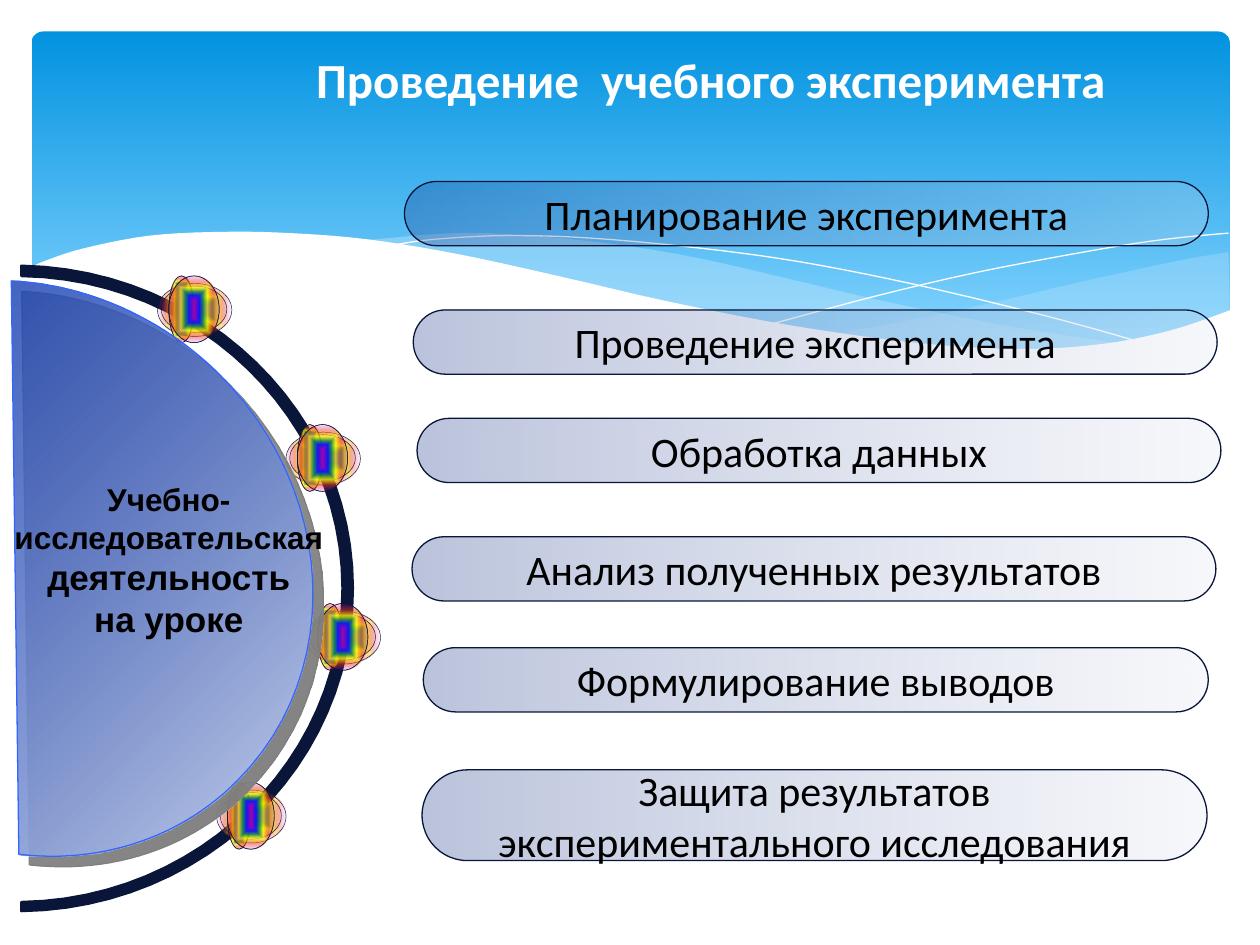
from dataclasses import dataclass

from lxml import etree
from pptx import Presentation
from pptx import util as u
from pptx.dml.color import RGBColor
from pptx.enum import shapes, text
from pptx.oxml.ns import qn


@dataclass(frozen=True)
class Theme:
    """Colours as hex with percent stops, and type sizes in points."""
    ink: str = "000000"
    white: str = "FFFFFF"
    navy: str = "091639"
    edge: str = "3366FF"
    shadow: str = "808080"
    ribbon: str = "C6E7FC"
    sky: tuple = ((0, "0293E0", 100), (90, "83D3FE", 100))
    pill: tuple = ((0, "133187", 29), (100, "D9DEEC", 21))
    disc: tuple = ((0, "C6D0EC", 100), (100, "1A42B2", 81))
    bead: tuple = ((0, "A603AB", 100), (21, "0819FB", 80), (35, "1A8D48", 66),
                   (52, "FFFF00", 50), (73, "EE3F17", 29), (88, "E81766", 15),
                   (100, "A603AB", 3))
    body_font: str = "Calibri"
    label_font: str = "Arial"
    title_size: int = 28
    pill_size: int = 24
    label_size: int = 18
    label_large: int = 20


@dataclass(frozen=True)
class Box:
    """A rectangle in inches."""
    left: float
    top: float
    width: float
    height: float

    def inside(self, left, top, width, height):
        """Return a box placed relative to this one."""
        return Box(self.left + left, self.top + top, width, height)

    def lengths(self):
        """Return the four lengths for a shape call."""
        return [u.Inches(v) for v in (self.left, self.top, self.width, self.height)]


THEME = Theme()


def add_color(parent, color, opacity):
    """Append a colour with its opacity in percent."""
    node = etree.SubElement(parent, qn("a:srgbClr"), val=color)
    if opacity < 100:
        etree.SubElement(node, qn("a:alpha"), val=str(opacity * 1000))


def fill_gradient(shape, stops, angle=None):
    """Fill linearly at an angle, or from the centre if there is none."""
    shape.fill.gradient()
    grad = shape.element.spPr.find(qn("a:gradFill"))
    for child in list(grad):
        grad.remove(child)
    stop_list = etree.SubElement(grad, qn("a:gsLst"))
    for place, color, opacity in stops:
        stop = etree.SubElement(stop_list, qn("a:gs"), pos=str(place * 1000))
        add_color(stop, color, opacity)
    if angle is None:
        centre = etree.SubElement(grad, qn("a:path"), path="shape")
        etree.SubElement(centre, qn("a:fillToRect"),
                         {side: "50000" for side in "ltrb"})
    else:
        etree.SubElement(grad, qn("a:lin"), ang=str(round(angle * 60000)), scaled="0")


def fill_solid(shape, color, opacity=100):
    """Fill with one colour at an opacity in percent."""
    shape.fill.solid()
    shape.fill.fore_color.rgb = RGBColor.from_string(color)
    if opacity < 100:
        solid = shape.element.spPr.find(qn("a:solidFill"))
        solid.clear()
        add_color(solid, color, opacity)


def set_outline(shape, color=None, width=0):
    """Drop the inherited shadow and set or remove the outline."""
    shape.shadow.inherit = False
    if color is None:
        shape.line.fill.background()
    else:
        shape.line.color.rgb = RGBColor.from_string(color)
        shape.line.width = u.Pt(width)


def write(frame, lines, *, sizes, font, color, bold=False, wrap=False,
          anchor=text.MSO_ANCHOR.MIDDLE):
    """Write centred lines, one paragraph each."""
    frame.word_wrap = wrap
    frame.vertical_anchor = anchor
    for index, (line, size) in enumerate(zip(lines, sizes)):
        para = frame.paragraphs[0] if index == 0 else frame.add_paragraph()
        para.alignment = text.PP_ALIGN.CENTER
        span = para.add_run()
        span.text = line
        span.font.size, span.font.name, span.font.bold = u.Pt(size), font, bold
        span.font.color.rgb = RGBColor.from_string(color)


def bezier(a, b, c, d, steps=24):
    """Sample a cubic curve."""
    return [tuple((1 - t) ** 3 * p + 3 * t * (1 - t) ** 2 * q
                  + 3 * t * t * (1 - t) * r + t ** 3 * s
                  for p, q, r, s in zip(a, b, c, d))
            for t in (i / steps for i in range(steps + 1))]


def smooth(points):
    """Sample a smooth curve that passes through all points."""
    ends = [points[0], *points, points[-1]]
    curve = []
    for before, start, end, after in zip(ends, ends[1:], ends[2:], ends[3:]):
        lead = tuple(s + (e - b) / 6 for b, s, e in zip(before, start, end))
        trail = tuple(e - (a - s) / 6 for s, e, a in zip(start, end, after))
        curve += bezier(start, lead, trail, end, 5)
    return curve


def add_outline(parent, box, points, close=True):
    """Build a freeform from points relative to a box."""
    spots = [(u.Inches(box.left + x), u.Inches(box.top + y)) for x, y in points]
    builder = parent.build_freeform(*spots[0], scale=1.0)
    builder.add_line_segments(spots[1:], close=close)
    return builder.convert_to_shape()


def add_header(page, box):
    """Draw the sky panel with its waves."""
    panel = page.shapes.add_shape(shapes.MSO_SHAPE.ROUNDED_RECTANGLE, *box.lengths())
    panel.adjustments[0] = 0.034
    fill_gradient(panel, THEME.sky, 90)
    set_outline(panel)
    waves = page.shapes.add_group_shape().shapes
    right_top = [(9.5, 1.75), (9.1, 1.82), (8.36, 1.98), (7.28, 2.23), (6.36, 2.4)]
    right_base = [(6.36, 2.4), (6.94, 2.47), (7.56, 2.52), (8.1, 2.52),
                  (8.64, 2.47), (9.1, 2.37), (9.51, 2.22)]
    long_top = [(8.68, 2.48), (7.82, 2.35), (6.81, 2.15), (6.04, 1.97), (5.3, 1.8),
                (4.64, 1.69), (3.95, 1.62), (3.36, 1.6), (2.61, 1.66)]
    long_base = [(2.61, 1.66), (3.37, 1.78), (4.24, 1.97), (5.05, 2.15), (5.93, 2.33),
                 (6.7, 2.45), (7.36, 2.52), (8.03, 2.53), (8.68, 2.48)]
    falling = [(2.84, 1.7), (3.19, 1.65), (3.76, 1.62), (4.44, 1.64), (5.31, 1.72),
               (6.11, 1.83), (7.02, 2.01), (8.06, 2.26), (8.82, 2.47)]
    rising = [(5.88, 2.32), (6.7, 2.1), (7.51, 1.91), (8.41, 1.74), (8.99, 1.65),
              (9.5, 1.6)]
    shore = [(9.52, 2.21), (9.05, 2.37), (8.5, 2.48), (7.84, 2.52), (7.01, 2.47),
             (6.01, 2.33), (5.04, 2.14), (4.22, 1.95), (3.4, 1.77), (2.67, 1.65),
             (2.05, 1.6), (1.52, 1.59), (0.94, 1.62), (0.42, 1.72), (0.11, 1.82),
             (-0.02, 1.88)]
    for top, base, opacity in ((right_top, right_base, 29), (long_top, long_base, 40)):
        ribbon = add_outline(waves, box, smooth(top) + smooth(base))
        fill_solid(ribbon, THEME.ribbon, opacity)
        set_outline(ribbon)
    for points in (falling, rising):
        strand = add_outline(waves, box, smooth(points), close=False)
        strand.fill.background()
        set_outline(strand, THEME.white)
    ground = add_outline(waves, box, smooth(shore) + [(-0.02, 3.04), (9.52, 3.04)])
    fill_solid(ground, THEME.white)
    set_outline(ground)


def add_bead(parent, box):
    """Draw one bead of overlapping ellipses."""
    scale = box.width / 0.59
    tall = [(0.09, 0, width, 0.53) for width in (0.2, 0.2, 0.4, 0.4)]
    for left, top, width, height in [(0, 0.06, 0.59, 0.42), (0.03, 0.08, 0.52, 0.37), *tall]:
        part = box.inside(left * scale, top, width * scale, height)
        oval = parent.add_shape(shapes.MSO_SHAPE.OVAL, *part.lengths())
        fill_gradient(oval, THEME.bead)
        set_outline(oval, THEME.navy, 0.25)


def add_orbit(page, box):
    """Draw the arc with its four beads."""
    orbit = page.shapes.add_group_shape().shapes
    inner = (bezier((0, 0.08), (1.41, 0.1), (2.55, 1.21), (2.55, 2.56))
             + bezier((2.55, 2.56), (2.55, 3.92), (1.41, 5.03), (0, 5.05)))
    outer = (bezier((0, 5.12), (1.46, 5.1), (2.63, 3.96), (2.63, 2.56))
             + bezier((2.63, 2.56), (2.63, 1.17), (1.46, 0.03), (0, 0)))
    arc = add_outline(orbit, box, inner + outer)
    fill_solid(arc, THEME.navy)
    set_outline(arc, THEME.navy, 1.5)
    for left, top, width in ((1.08, 0.08, 0.59), (2.1, 1.26, 0.59),
                             (2.26, 2.68, 0.59), (1.55, 4.1, 0.55)):
        add_bead(orbit, box.inside(left, top, width, 0.53))


def add_disc(page, box):
    """Draw the shaded half disc and its label."""
    rim = (bezier((0.07, 4.55), (0.73, 4.63), (1.37, 4.41), (1.81, 3.96))
           + bezier((1.81, 3.96), (2.66, 3.1), (2.59, 1.66), (1.65, 0.73))
           + bezier((1.65, 0.73), (1.2, 0.29), (0.61, 0.03), (0.01, 0)))
    disc = add_outline(page.shapes, box, rim)
    fill_gradient(disc, THEME.disc, 224.7)
    set_outline(disc, THEME.edge, 0.75)
    effects = disc.element.spPr.find(qn("a:effectLst"))
    cast = etree.SubElement(effects, qn("a:outerShdw"), dist=str(u.Pt(8.5)),
                            dir=str(45 * 60000), algn="ctr", rotWithShape="0")
    add_color(cast, THEME.shadow, 100)
    label = page.shapes.add_textbox(*box.inside(-0.18, 1.53, 2.88, 1.38).lengths())
    write(label.text_frame,
          ["Учебно-", "исследовательская", "деятельность", "на уроке"],
          sizes=[THEME.label_size] * 2 + [THEME.label_large] * 2,
          font=THEME.label_font, color=THEME.ink, bold=True, wrap=True,
          anchor=text.MSO_ANCHOR.TOP)


def add_title(page, box):
    """Place the title above the header panel."""
    title = page.shapes.title
    title.element.getparent().append(title.element)
    title.left, title.top, title.width, title.height = box.lengths()
    write(title.text_frame, ["Проведение  учебного эксперимента"],
          sizes=[THEME.title_size], font=THEME.body_font, color=THEME.white,
          bold=True, anchor=text.MSO_ANCHOR.TOP)


def add_pill(page, box, lines):
    """Draw one stage of the experiment."""
    pill = page.shapes.add_shape(shapes.MSO_SHAPE.ROUNDED_RECTANGLE, *box.lengths())
    pill.adjustments[0] = 0.5
    fill_gradient(pill, THEME.pill, 0)
    set_outline(pill, THEME.navy, 0.75)
    write(pill.text_frame, lines, sizes=[THEME.pill_size] * len(lines),
          font=THEME.body_font, color=THEME.ink)


def main():
    """Build the slide and save the deck."""
    deck = Presentation()
    deck.slide_width, deck.slide_height = u.Inches(10), u.Inches(7.5)
    page = deck.slides.add_slide(deck.slide_layouts[5])
    add_header(page, Box(0.25, 0.25, 9.51, 2.7))
    add_orbit(page, Box(0.17, 2.11, 2.63, 5.12))
    add_disc(page, Box(0.08, 2.23, 2.41, 4.56))
    add_title(page, Box(2.37, 0.34, 6.54, 0.57))
    for box, lines in (
        (Box(3.21, 1.44, 6.38, 0.51), ["Планирование эксперимента"]),
        (Box(3.28, 2.46, 6.38, 0.51), ["Проведение эксперимента"]),
        (Box(3.31, 3.32, 6.38, 0.51), ["Обработка данных"]),
        (Box(3.27, 4.26, 6.38, 0.51), ["Анализ полученных результатов"]),
        (Box(3.36, 5.14, 6.23, 0.51), ["Формулирование выводов"]),
        (Box(3.35, 6.11, 6.23, 0.72),
         ["Защита результатов", "экспериментального исследования"]),
    ):
        add_pill(page, box, lines)
    deck.save("out.pptx")


if __name__ == "__main__":
    main()
